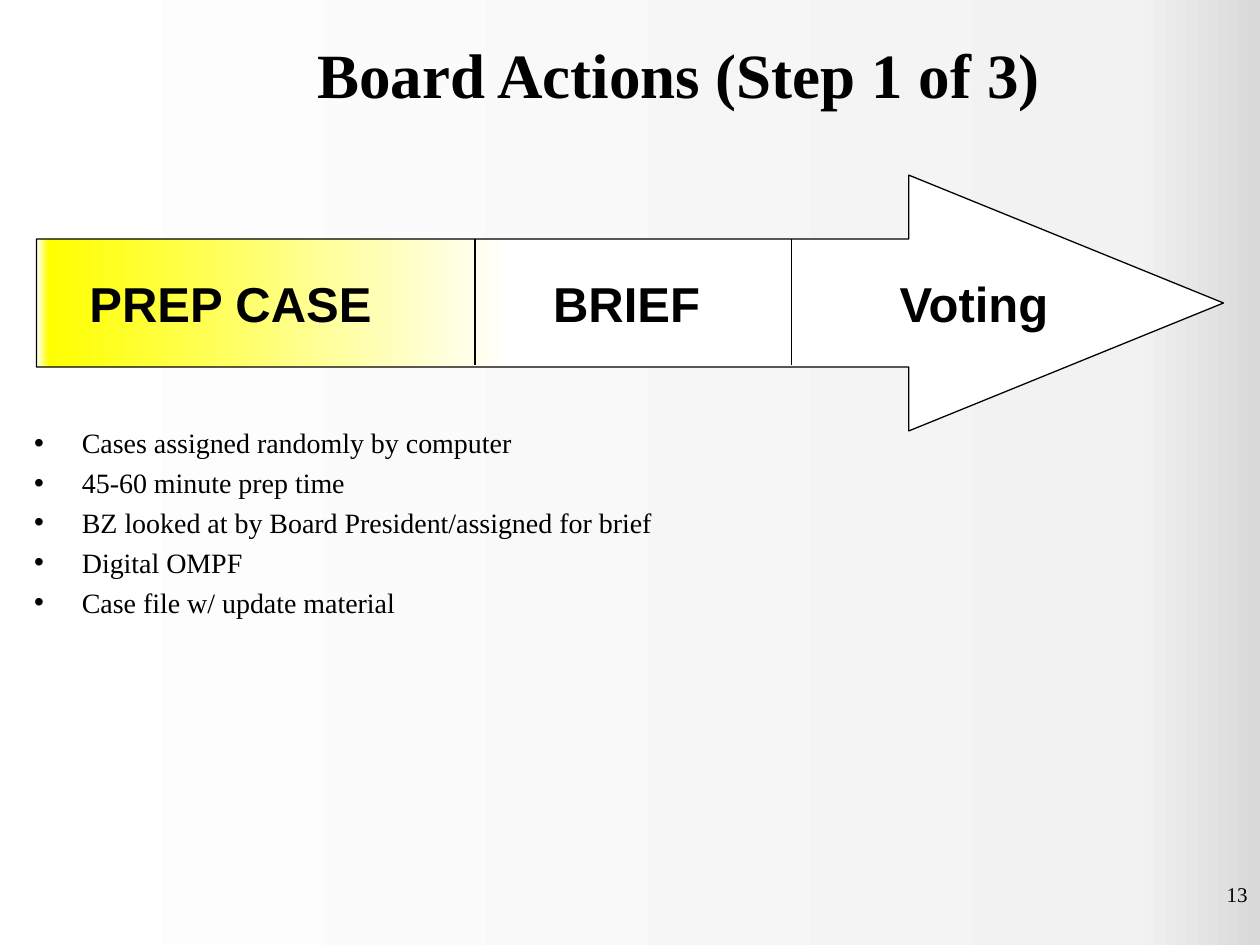
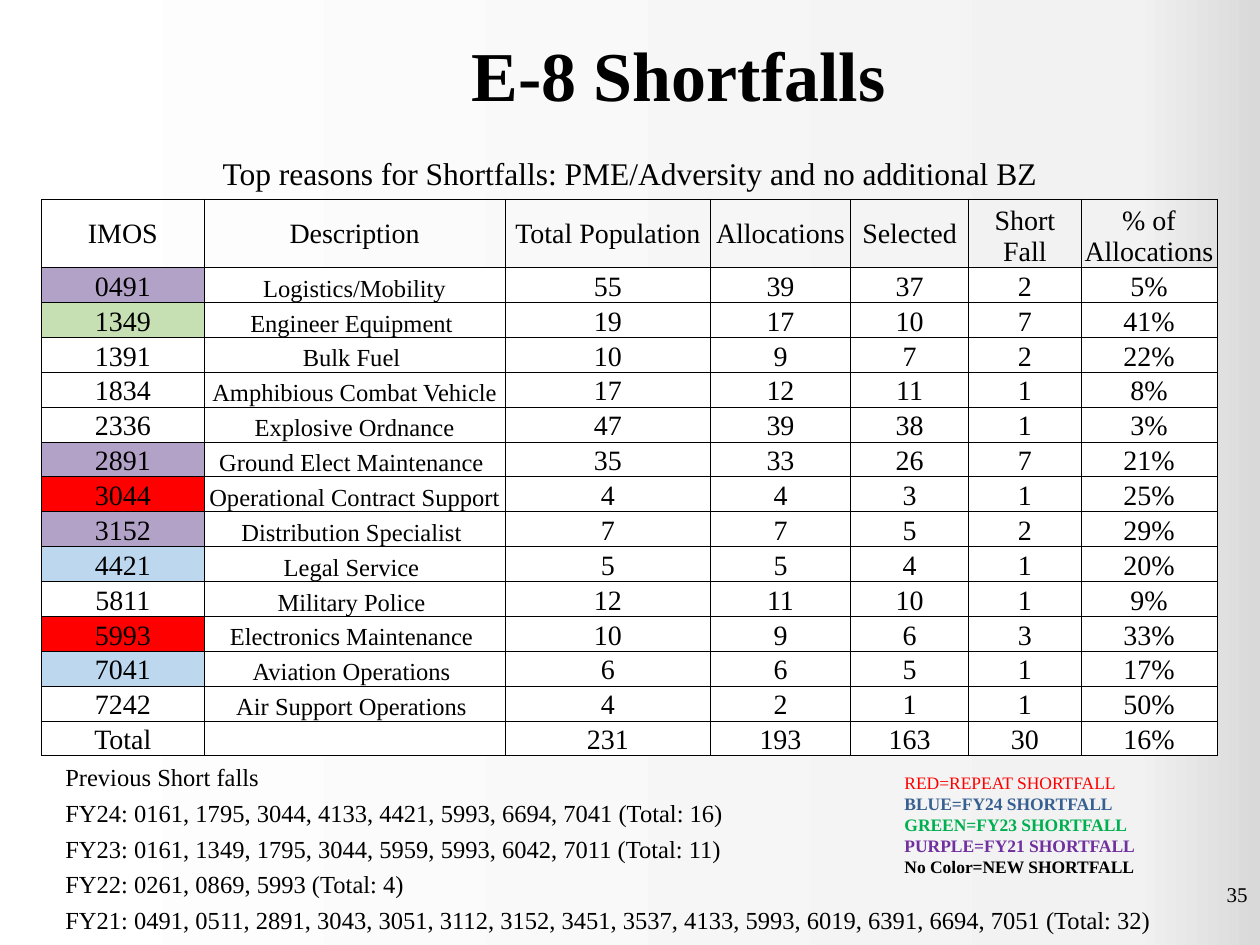
from dataclasses import dataclass
from typing import NamedTuple

from lxml.etree import SubElement
from pptx import Presentation
from pptx.dml.color import RGBColor
from pptx.enum.shapes import MSO_CONNECTOR, MSO_SHAPE
from pptx.enum.text import MSO_ANCHOR, MSO_AUTO_SIZE, PP_ALIGN
from pptx.oxml.ns import qn
from pptx.util import Inches, Pt

WIDTH, HEIGHT = Inches(10), Inches(7.5)
SERIF, SANS = "Times New Roman", "Arial"
COLORS = {
    "black": "000000", "white": "FFFFFF", "pale": "F2F2F2", "grey": "D9D9D9",
    "yellow": "FFFF00", "red": "FF0000", "purple cell": "B3A2C7",
    "green cell": "C6E0B4", "blue cell": "BDD7EE",
    "blue": "376092", "green": "00B050", "purple": "7030A0",
}
BACKDROP = [(0, "white"), (90, "pale"), (100, "grey")]
ARROW_GLOW = [(0, "white"), (1, "yellow"), (40, "white")]
PARAGRAPH_GAP = Pt(3.6)


class Box(NamedTuple):
    """A frame in percent of the slide's width and height."""
    left: float
    top: float
    width: float
    height: float


@dataclass
class Line:
    text: str
    size: int
    color: str = "black"
    bold: bool = False
    face: str = SERIF
    align: PP_ALIGN = PP_ALIGN.LEFT


class Specialty(NamedTuple):
    imos: str
    description: str
    population: int
    allocations: int
    selected: int
    fill: str = "white"


NUMBER_BOX = Box(76.7, 92.67, 23.3, 5.33)
ARROW_BOX = Box(2.9, 18.53, 94.2, 27.07)
STEP_DIVIDERS = [37.7, 62.8]
DIVIDER_TOP, DIVIDER_BOTTOM = 25.33, 38.6
STEP_TABS = [3.68, 6.43]
PREP_POINTS = [
    "Cases assigned randomly by computer",
    "45-60 minute prep time",
    "BZ looked at by Board President/assigned for brief",
    "Digital OMPF",
    "Case file w/ update material",
]
HEADINGS = ["IMOS", "Description", "Total Population", "Allocations",
            "Selected", "Short Fall", "% of Allocations"]
COLUMN_SHARES = [12.9, 23.9, 16.3, 11.1, 9.4, 8.9, 10.8]
HEADING_SHARE, ROW_SHARE = 6.67, 3.33
SPECIALTIES = [
    Specialty("0491", "Logistics/Mobility", 55, 39, 37, "purple cell"),
    Specialty("1349", "Engineer Equipment ", 19, 17, 10, "green cell"),
    Specialty("1391", "Bulk Fuel ", 10, 9, 7),
    Specialty("1834", "Amphibious Combat Vehicle", 17, 12, 11),
    Specialty("2336", "Explosive Ordnance", 47, 39, 38),
    Specialty("2891", "Ground Elect Maintenance ", 35, 33, 26, "purple cell"),
    Specialty("3044", "Operational Contract Support", 4, 4, 3, "red"),
    Specialty("3152", "Distribution Specialist ", 7, 7, 5, "purple cell"),
    Specialty("4421", "Legal Service ", 5, 5, 4, "blue cell"),
    Specialty("5811", "Military Police ", 12, 11, 10),
    Specialty("5993", "Electronics Maintenance ", 10, 9, 6, "red"),
    Specialty("7041", "Aviation Operations ", 6, 6, 5, "blue cell"),
    Specialty("7242", "Air Support Operations ", 4, 2, 1),
]
LEGEND = [
    Line("RED=REPEAT SHORTFALL", 10, "red"),
    Line("BLUE=FY24 SHORTFALL", 10, "blue", True),
    Line("GREEN=FY23 SHORTFALL", 10, "green", True),
    Line("PURPLE=FY21 SHORTFALL", 10, "purple", True),
    Line("No Color=NEW SHORTFALL", 10, "black", True),
]
PREVIOUS = [
    "Previous Short falls",
    "FY24: 0161, 1795, 3044, 4133, 4421, 5993, 6694, 7041 (Total: 16)",
    "FY23: 0161, 1349, 1795, 3044, 5959, 5993, 6042, 7011 (Total: 11)",
    "FY22: 0261, 0869, 5993 (Total: 4)",
    "FY21: 0491, 0511, 2891, 3043, 3051, 3112, 3152, 3451, 3537, 4133, "
    "5993, 6019, 6391, 6694, 7051 (Total: 32)",
]


def rgb(color: str) -> RGBColor:
    return RGBColor.from_string(COLORS[color])


def across(share: float) -> int:
    return round(WIDTH * share / 100)


def down(share: float) -> int:
    return round(HEIGHT * share / 100)


def frame(box: Box) -> tuple:
    return across(box.left), down(box.top), across(box.width), down(box.height)


def set_all(target, **values) -> None:
    for attribute, value in values.items():
        setattr(target, attribute, value)


def place(shape, box: Box) -> None:
    left, top, width, height = frame(box)
    set_all(shape, left=left, top=top, width=width, height=height)


def fill_gradient(owner, stops: list) -> None:
    """Give the owner of a fill a left-to-right gradient with any stops."""
    owner.fill.gradient()
    owner.fill.gradient_angle = 0
    stop_list = next(owner_element(owner).iter(qn("a:gsLst")))
    for old in list(stop_list):
        stop_list.remove(old)
    for percent, color in stops:
        stop = SubElement(stop_list, qn("a:gs"), pos=str(percent * 1000))
        SubElement(stop, qn("a:srgbClr"), val=COLORS[color])


def owner_element(owner):
    """A background has no public element, so its slide element is used."""
    return owner.element if hasattr(owner, "element") else owner._cSld


def write(text_frame, lines: list, gap: int = 0) -> None:
    for index, line in enumerate(lines):
        paragraph = text_frame.paragraphs[0] if index == 0 else text_frame.add_paragraph()
        set_all(paragraph, alignment=line.align, space_before=gap if index else Pt(0))
        if line.text:
            run = paragraph.add_run()
            run.text = line.text
            set_all(run.font, name=line.face, size=Pt(line.size), bold=line.bold)
            run.font.color.rgb = rgb(line.color)


def set_bullets(text_frame, hanging: float) -> None:
    """Bullet every paragraph, or clear the bullets when hanging is 0."""
    for paragraph in text_frame.paragraphs:
        properties = paragraph._p.get_or_add_pPr()
        properties.set("marL", str(Inches(hanging)))
        properties.set("indent", str(-Inches(hanging)))
        if hanging:
            SubElement(properties, qn("a:buFont"), typeface=SANS)
            SubElement(properties, qn("a:buChar"), char="•")
        else:
            SubElement(properties, qn("a:buNone"))


def add_text(slide, box: Box, lines: list, gap: int = 0) -> None:
    text_frame = slide.shapes.add_textbox(*frame(box)).text_frame
    text_frame.word_wrap = True
    write(text_frame, lines, gap)


def fill_body(slide, box: Box, lines: list, hanging: float = 0) -> None:
    body = slide.placeholders[1]
    place(body, box)
    set_all(body.text_frame, auto_size=MSO_AUTO_SIZE.NONE, word_wrap=True)
    write(body.text_frame, lines, PARAGRAPH_GAP)
    set_bullets(body.text_frame, hanging)


def start_slide(prs, title: Line, title_box: Box, number: str):
    slide = prs.slides.add_slide(prs.slide_layouts[1])
    heading = slide.shapes.title
    place(heading, title_box)
    set_all(heading.text_frame, auto_size=MSO_AUTO_SIZE.NONE,
            vertical_anchor=MSO_ANCHOR.MIDDLE)
    write(heading.text_frame, [title])
    add_text(slide, NUMBER_BOX, [Line(number, 12, align=PP_ALIGN.RIGHT)])
    return slide


def outline(shape) -> None:
    shape.line.color.rgb = rgb("black")
    shape.line.width = Pt(0.75)


def add_step_arrow(slide) -> None:
    group = slide.shapes.add_group_shape()
    arrow = group.shapes.add_shape(MSO_SHAPE.RIGHT_ARROW, *frame(ARROW_BOX))
    arrow.adjustments[0], arrow.adjustments[1] = 0.5, 1.23
    arrow.shadow.inherit = False
    fill_gradient(arrow, ARROW_GLOW)
    outline(arrow)
    steps = arrow.text_frame
    set_all(steps, vertical_anchor=MSO_ANCHOR.MIDDLE, word_wrap=True,
            margin_left=Inches(0.42))
    tabs = SubElement(steps.paragraphs[0]._p.get_or_add_pPr(), qn("a:tabLst"))
    for position in STEP_TABS:
        SubElement(tabs, qn("a:tab"), pos=str(Inches(position)), algn="l")
    write(steps, [Line("PREP CASE\tBRIEF\tVoting", 28, bold=True, face=SANS)])
    for share in STEP_DIVIDERS:
        divider = group.shapes.add_connector(
            MSO_CONNECTOR.STRAIGHT, across(share), down(DIVIDER_TOP),
            across(share), down(DIVIDER_BOTTOM))
        outline(divider)
        SubElement(divider.element.find(qn("p:spPr")), qn("a:effectLst"))


def shortfall_cells(entry: Specialty) -> list:
    short = entry.allocations - entry.selected
    numbers = [entry.population, entry.allocations, entry.selected, short]
    return [entry.imos, entry.description, *map(str, numbers),
            f"{short / entry.allocations:.0%}"]


def add_borders(cell_properties) -> None:
    for index, edge in enumerate(("a:lnL", "a:lnR", "a:lnT", "a:lnB")):
        border = SubElement(cell_properties, qn(edge), w=str(Pt(0.5)))
        SubElement(SubElement(border, qn("a:solidFill")),
                   qn("a:srgbClr"), val=COLORS["black"])
        cell_properties.insert(index, border)


def add_shortfall_table(slide) -> None:
    totals = [sum(column) for column in list(zip(*SPECIALTIES))[2:5]]
    entries = [*SPECIALTIES, Specialty("Total", "", *totals)]
    rows = [HEADINGS, *map(shortfall_cells, entries)]
    table_box = Box(3.3, 21.07, sum(COLUMN_SHARES), HEADING_SHARE + ROW_SHARE * len(entries))
    holder = slide.shapes.add_table(len(rows), len(HEADINGS), *frame(table_box))
    table = holder.table
    set_all(table, first_row=False, horz_banding=False)
    for column, share in zip(table.columns, COLUMN_SHARES):
        column.width = across(share)
    for r, texts in enumerate(rows):
        table.rows[r].height = down(ROW_SHARE if r else HEADING_SHARE)
        for c, text in enumerate(texts):
            cell = table.cell(r, c)
            centred = r == 0 and c < 5
            set_all(cell, margin_left=Inches(0.01), margin_right=Inches(0.01),
                    margin_top=Inches(0.01), margin_bottom=0,
                    vertical_anchor=MSO_ANCHOR.MIDDLE if centred else MSO_ANCHOR.BOTTOM)
            size = 14 if r and c == 1 else 16
            write(cell.text_frame, [Line(text, size, align=PP_ALIGN.CENTER)])
            if r == 0:
                cell.fill.background()
            else:
                cell.fill.solid()
                cell.fill.fore_color.rgb = rgb(entries[r - 1].fill if c == 0 else "white")
    for cell_properties in holder.element.iter(qn("a:tcPr")):
        add_borders(cell_properties)
    for empty in holder.element.xpath(".//a:p[not(a:r)]"):
        SubElement(empty, qn("a:endParaRPr"), sz="1400")


def build_board_actions(prs) -> None:
    title = Line("Board Actions (Step 1 of 3)", 36, bold=True, align=PP_ALIGN.CENTER)
    slide = start_slide(prs, title, Box(11.7, 0, 84.3, 15.6), "13")
    fill_body(slide, Box(1.7, 44.4, 85, 51.07),
              [Line(point, 16) for point in PREP_POINTS], hanging=0.38)
    add_step_arrow(slide)


def build_shortfalls(prs) -> None:
    title = Line("E-8 Shortfalls ", 40, bold=True, align=PP_ALIGN.CENTER)
    slide = start_slide(prs, title, Box(9.1, 2.27, 90.9, 11.07), "35")
    reasons = "Top reasons for Shortfalls: PME/Adversity and no additional BZ"
    fill_body(slide, Box(0, 15.6, 100, 5.6), [Line(reasons, 18, align=PP_ALIGN.CENTER)])
    add_text(slide, Box(70.8, 81.07, 21.2, 12.53), LEGEND)
    add_shortfall_table(slide)
    add_text(slide, Box(4.2, 80, 92.5, 18.4),
             [Line(text, 14) for text in PREVIOUS], PARAGRAPH_GAP)


def main() -> None:
    prs = Presentation()
    set_all(prs, slide_width=WIDTH, slide_height=HEIGHT)
    fill_gradient(prs.slide_master.background, BACKDROP)
    build_board_actions(prs)
    build_shortfalls(prs)
    prs.save("out.pptx")


if __name__ == "__main__":
    main()
